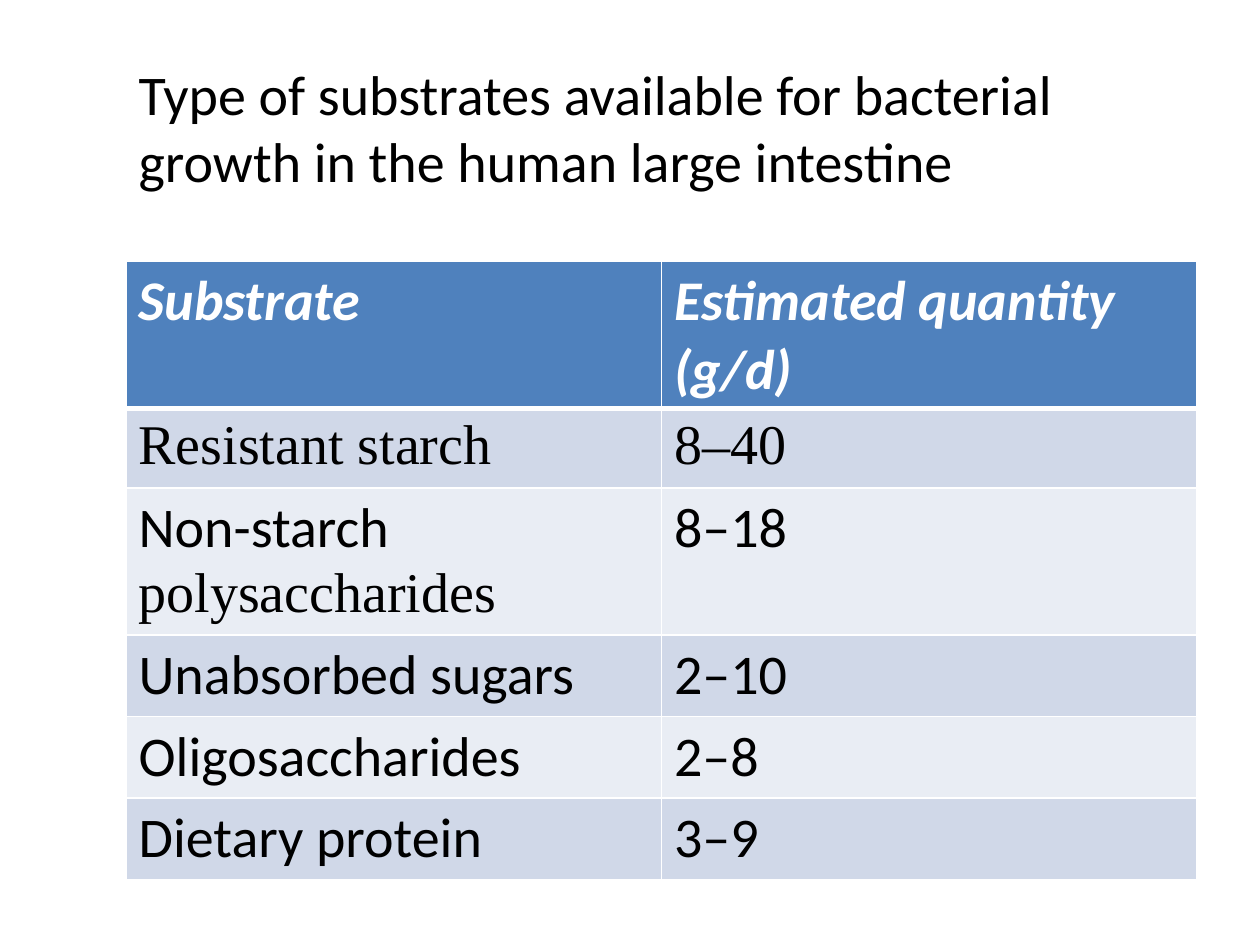
from typing import NamedTuple

from lxml.etree import SubElement
from pptx import Presentation
from pptx.dml.color import RGBColor
from pptx.enum.text import MSO_ANCHOR as Anchor, MSO_AUTO_SIZE as Fit, PP_ALIGN as Align
from pptx.oxml.ns import qn
from pptx.util import Cm, Pt

WHITE = RGBColor(0xFF, 0xFF, 0xFF)
BLACK = RGBColor(0, 0, 0)
BLUE = RGBColor(0x4F, 0x81, 0xBD)
BANDS = (RGBColor(0xE9, 0xED, 0xF4), RGBColor(0xD0, 0xD8, 0xE8))
SANS, SERIF = "Calibri", "Times New Roman"
SIZE = Pt(32)


class Piece(NamedTuple):
    text: str
    font: str = SANS


class Row(NamedTuple):
    high: float  # cm
    name: list[Piece]
    amount: list[Piece]


ROWS = [
    Row(2.97, [Piece("Substrate")], [Piece("Estimated quantity (g/d)")]),
    Row(1.57, [Piece("Resistant starch", SERIF)], [Piece("8–40", SERIF)]),
    Row(2.9, [Piece("Non-starch "), Piece("polysaccharides", SERIF)], [Piece("8–18")]),
    Row(1.64, [Piece("Unabsorbed sugars")], [Piece("2–10")]),
    Row(1.64, [Piece("Oligosaccharides")], [Piece("2–8")]),
    Row(1.64, [Piece("Dietary protein")], [Piece("3–9")]),
]


def write(para, pieces: list[Piece], color: RGBColor, strong: bool = False) -> None:
    for piece in pieces:
        run = para.add_run()
        run.text = piece.text
        font = run.font
        font.name, font.size = piece.font, SIZE
        font.bold = font.italic = strong
        font.color.rgb = color


def edge(cell, side: str, width: float) -> None:
    props = cell._tc.get_or_add_tcPr()
    line = SubElement(props, qn(f"a:ln{side}"), w=str(Pt(width)))
    fill = SubElement(line, qn("a:solidFill"))
    SubElement(fill, qn("a:srgbClr"), val=str(WHITE))


def draw_cell(cell, pieces: list[Piece], index: int) -> None:
    head = index == 0
    # The rule under the header is thicker than the others
    widths = {"L": 1, "R": 1, "T": 3 if index == 1 else 1, "B": 3 if head else 1}
    for side, width in widths.items():
        edge(cell, side, width)
    cell.fill.solid()
    cell.fill.fore_color.rgb = BLUE if head else BANDS[index % 2]
    write(cell.text_frame.paragraphs[0], pieces, WHITE if head else BLACK, head)


def draw_title(title) -> None:
    title.left, title.top, title.width, title.height = Cm(2.54), Cm(1.07), Cm(21.39), Cm(3)
    frame = title.text_frame
    frame.word_wrap = True
    frame.auto_size = Fit.SHAPE_TO_FIT_TEXT
    frame.vertical_anchor = Anchor.TOP
    para = frame.paragraphs[0]
    para.alignment = Align.LEFT
    text = "Type of substrates available for bacterial growth in the human large intestine"
    write(para, [Piece(text)], BLACK)


def draw_table(slide) -> None:
    high = Cm(sum(row.high for row in ROWS))
    table = slide.shapes.add_table(len(ROWS), 2, Cm(2.54), Cm(5.26), Cm(21.59), high).table
    for index, row in enumerate(ROWS):
        table.rows[index].height = Cm(row.high)
        for col, pieces in enumerate((row.name, row.amount)):
            draw_cell(table.cell(index, col), pieces, index)


def main() -> None:
    deck = Presentation()
    deck.slide_width, deck.slide_height = Cm(25.4), Cm(19.05)
    slide = deck.slides.add_slide(deck.slide_layouts[5])  # title only
    draw_title(slide.shapes.title)
    draw_table(slide)
    deck.save("out.pptx")


if __name__ == "__main__":
    main()
